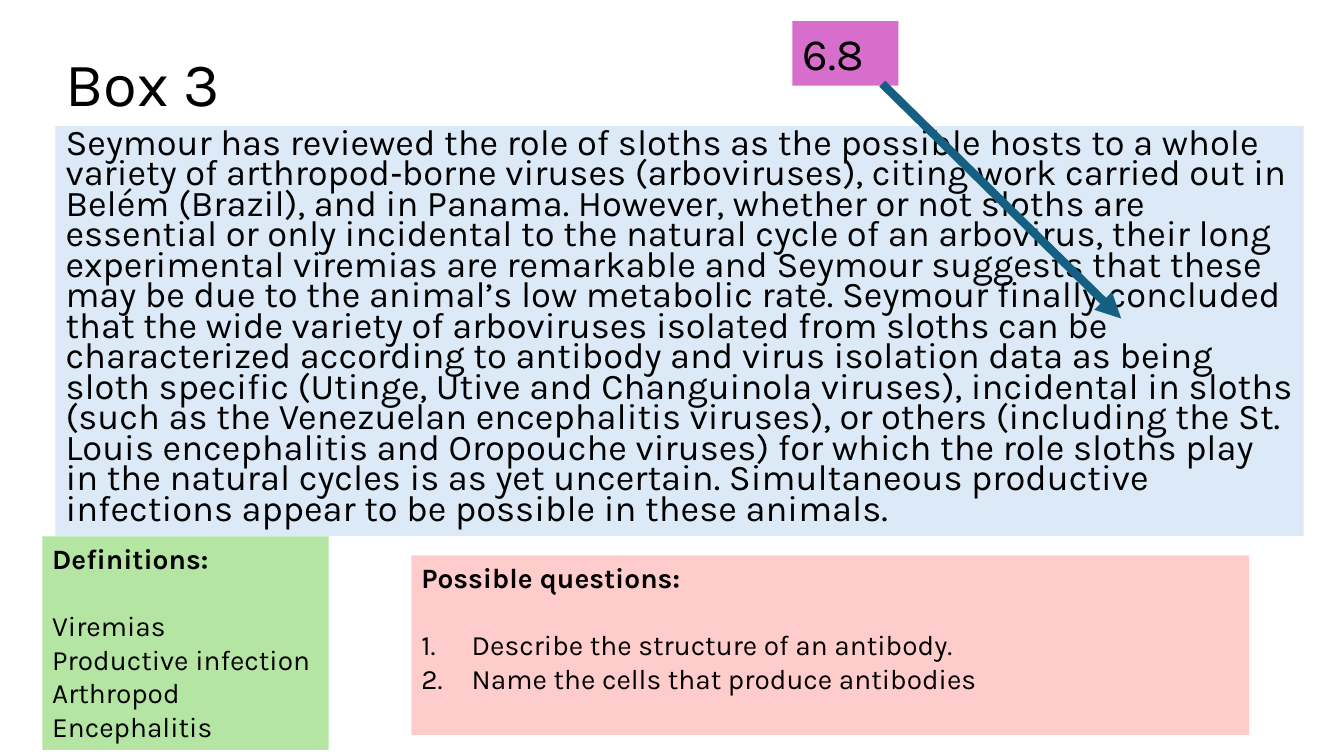
"""Build the Box 3 slide on sloths as hosts of arboviruses."""
from lxml.etree import SubElement
from pptx import Presentation
from pptx.dml.color import RGBColor
from pptx.enum.shapes import MSO_CONNECTOR as CONN
from pptx.enum.text import MSO_ANCHOR as ANCHOR, MSO_AUTO_SIZE as AUTO, PP_ALIGN as ALIGN
from pptx.oxml.ns import qn
from pptx.util import Inches, Pt

FONT = "Karla"
COLORS = {"text": "000000", "passage": "DCEAF7", "definitions": "B4E5A2",
          "section": "D86ECC", "questions": "FFCCCC", "arrow": "156082"}

TITLE = "Box 3"
SENTENCES = [
    "Seymour has reviewed the role of sloths as the possible hosts to a whole variety of "
    "arthropod‑borne viruses (arboviruses), citing work carried out in Belém (Brazil), and in "
    "Panama.",
    "However, whether or not sloths are essential or only incidental to the natural "
    "cycle of an arbovirus, their long experimental viremias are remarkable and Seymour "
    "suggests that these may be due to the animal’s low metabolic rate.",
    "Seymour finally concluded that the wide variety of arboviruses isolated from sloths can "
    "be characterized according to antibody and virus isolation data as being sloth specific "
    "(Utinge, Utive and Changuinola viruses), incidental in sloths (such as the Venezuelan "
    "encephalitis viruses), or others (including the St. Louis encephalitis and Oropouche "
    "viruses) for which the role sloths play in the natural cycles is as yet uncertain.",
    "Simultaneous productive infections appear to be possible in these animals.",
]
SECTION = "6.8"
LISTS = [
    ("definitions", (0.42, 5.32, 2.84, 2.12), "Definitions:",
     ["Viremias", "Productive infection", "Arthropod", "Encephalitis"], False),
    ("questions", (4.08, 5.51, 8.31, 1.78), "Possible questions:",
     ["Describe the structure of an antibody.", "Name the cells that produce antibodies"], True),
]


def rgb(name):
    return RGBColor.from_string(COLORS[name])


def place(sp, box, fill=None, anchor=ANCHOR.TOP):
    sp.left, sp.top, sp.width, sp.height = map(Inches, box)
    if fill:
        sp.fill.solid()
        sp.fill.fore_color.rgb = rgb(fill)
    tf = sp.text_frame
    tf.word_wrap = True
    tf.auto_size = AUTO.NONE
    tf.vertical_anchor = anchor
    return tf


def write(tf, text, size=20, bold=False, line=1.0, before=0, after=0, numbered=False):
    p = tf.paragraphs[0] if not tf.text else tf.add_paragraph()
    p.alignment = ALIGN.LEFT
    p.line_spacing, p.space_before, p.space_after = line, Pt(before), Pt(after)
    pPr = p._p.get_or_add_pPr()
    indent = Inches(0.5) if numbered else 0
    pPr.set("marL", str(indent))
    pPr.set("indent", str(-indent))
    if numbered:
        SubElement(pPr, qn("a:buFont"), typeface="+mj-lt")
        SubElement(pPr, qn("a:buAutoNum"), type="arabicPeriod")
    else:
        SubElement(pPr, qn("a:buNone"))
    r = p.add_run()
    r.text = text
    r.font.name, r.font.size, r.font.bold = FONT, Pt(size), bold
    r.font.color.rgb = rgb("text")


def add_arrow(slide, start, end):
    cx = slide.shapes.add_connector(CONN.STRAIGHT, *map(Inches, start + end))
    cx.line.color.rgb = rgb("arrow")
    cx.line.width = Pt(6)
    SubElement(cx.line._get_or_add_ln(), qn("a:tailEnd"), type="triangle")
    SubElement(cx._element.spPr, qn("a:effectLst"))


def main():
    prs = Presentation()
    prs.slide_width, prs.slide_height = Inches(13.33), Inches(7.5)
    slide = prs.slides.add_slide(prs.slide_layouts[1])
    title, body = slide.placeholders

    write(place(title, (0.55, 0.13, 11.5, 1.45), anchor=ANCHOR.MIDDLE), TITLE, size=44, line=0.9)
    write(place(body, (0.55, 1.25, 12.38, 4.07), "passage"), " ".join(SENTENCES),
          size=25.9, line=0.7, before=10)

    section = slide.shapes.add_textbox(0, 0, 0, 0)
    write(place(section, (7.86, 0.21, 1.05, 0.64), "section"), SECTION, size=32)
    add_arrow(slide, (8.75, 0.83), (11.12, 3.16))

    for fill, box, heading, items, numbered in LISTS:
        tf = place(slide.shapes.add_textbox(0, 0, 0, 0), box, fill)
        write(tf, heading, bold=True, after=24)
        for item in items:
            write(tf, item, numbered=numbered)

    prs.save("out.pptx")


if __name__ == "__main__":
    main()
